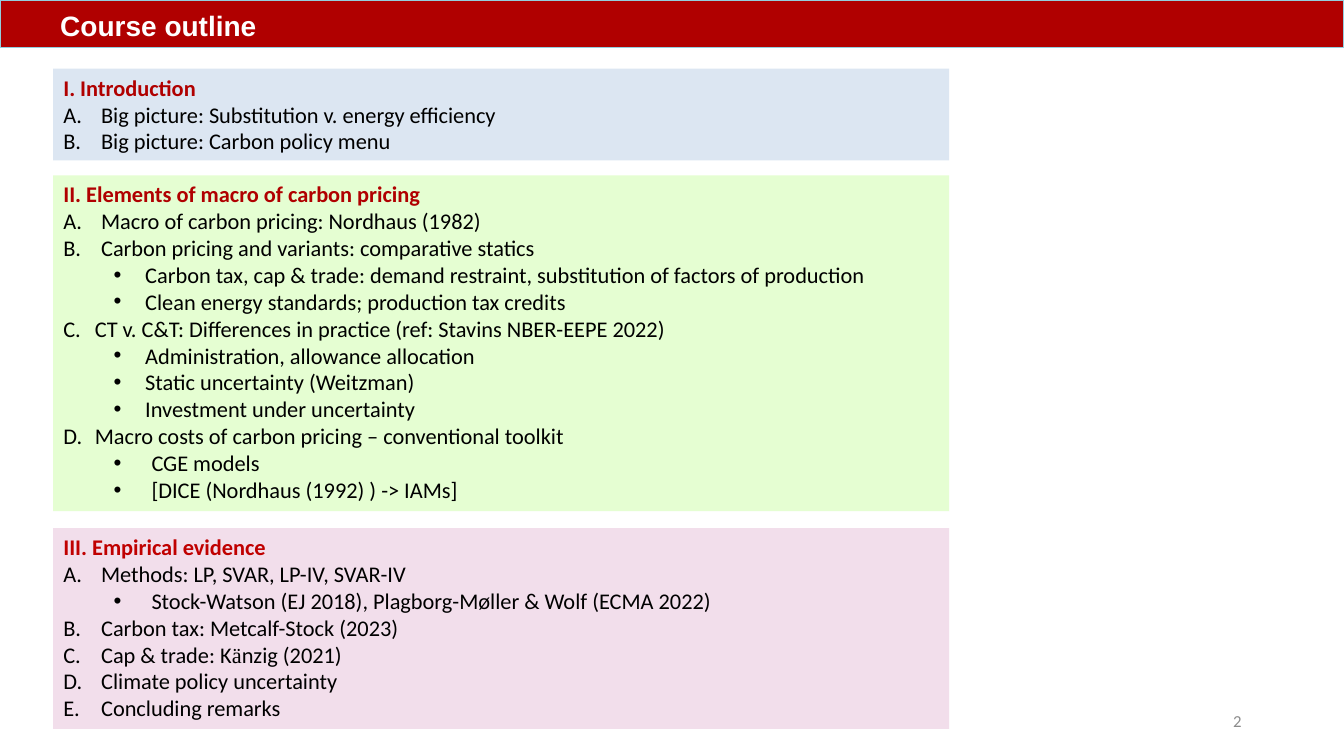
from dataclasses import dataclass

from lxml.etree import SubElement
from pptx import Presentation
from pptx.dml.color import RGBColor
from pptx.enum.text import MSO_ANCHOR as Anchor, MSO_AUTO_SIZE as AutoSize, PP_ALIGN as Align
from pptx.oxml.ns import qn
from pptx.util import Pt

CRIMSON, BRIGHT_RED, BLACK, WHITE = "B00000", "C00000", "000000", "FFFFFF"
BOX_LEFT, BOX_WIDTH = 38, 640


@dataclass(frozen=True)
class Entry:
    """One outline line; start sets the first letter of a new lettered sequence."""
    text: str
    hang: float = 27
    level: int = 0
    start: int = 1
    serif_letter: str = ""


@dataclass(frozen=True)
class Section:
    heading: str
    top: float
    height: float
    fill: str
    entries: tuple[Entry, ...]
    heading_color: str = CRIMSON


SECTIONS = (
    Section("I. Introduction", 49.1, 65.5, "DCE6F2", (
        Entry("Big picture: Substitution v. energy efficiency"),
        Entry("Big picture: Carbon policy menu"),
    )),
    Section("II. Elements of macro of carbon pricing", 125.3, 239.8, "E5FED2", (
        Entry("Macro of carbon pricing: Nordhaus (1982)"),
        Entry("Carbon pricing and variants: comparative statics"),
        Entry("Carbon tax, cap & trade: demand restraint, substitution of factors of production",
              22.5, level=1),
        Entry("Clean energy standards; production tax credits", 22.5, level=1),
        Entry("CT v. C&T: Differences in practice (ref: Stavins NBER-EEPE 2022)", 22.5, start=3),
        Entry("Administration, allowance allocation", 22.5, level=1),
        Entry("Static uncertainty (Weitzman)", 22.5, level=1),
        Entry("Investment under uncertainty", 22.5, level=1),
        Entry("Macro costs of carbon pricing – conventional toolkit", 22.5, start=3),
        Entry("CGE models", level=1),
        Entry("[DICE (Nordhaus (1992) ) -> IAMs]", level=1),
    )),
    Section("III. Empirical evidence", 377.3, 143.3, "F2DEEB", (
        Entry("Methods: LP, SVAR, LP-IV, SVAR-IV"),
        Entry("Stock-Watson (EJ 2018), Plagborg-Møller & Wolf (ECMA 2022)", level=1),
        Entry("Carbon tax: Metcalf-Stock (2023)"),
        Entry("Cap & trade: Känzig (2021)", serif_letter="ä"),
        Entry("Climate policy uncertainty"),
        Entry("Concluding remarks"),
    ), BRIGHT_RED),
)


def rgb(color: str) -> RGBColor:
    return RGBColor.from_string(color)


def style(paragraph, size: float, color: str, bold: bool = False, face: str = "Calibri") -> None:
    paragraph.line_spacing = 1.0
    paragraph.space_before = paragraph.space_after = Pt(0)
    font = paragraph.font
    font.size, font.bold, font.name = Pt(size), bold, face
    font.color.rgb = rgb(color)


def place(shape, left: float, top: float, width: float, height: float) -> None:
    shape.left, shape.top, shape.width, shape.height = map(Pt, (left, top, width, height))


def fill_with(shape, color: str) -> None:
    shape.fill.solid()
    shape.fill.fore_color.rgb = rgb(color)


def set_indent(paragraph, margin: float, hang: float):
    properties = paragraph._p.get_or_add_pPr()
    properties.set("marL", str(Pt(margin)))
    properties.set("indent", str(-Pt(hang)))
    return properties


def add_entry(frame, entry: Entry) -> None:
    paragraph = frame.add_paragraph()
    paragraph.level = entry.level
    properties = set_indent(paragraph, 36 * entry.level + entry.hang, entry.hang)
    if entry.level:
        SubElement(properties, qn("a:buFont"), typeface="Arial")
        SubElement(properties, qn("a:buChar"), char="•")
    else:
        SubElement(properties, qn("a:buFont"), typeface="+mj-lt")
        lettering = SubElement(properties, qn("a:buAutoNum"), type="alphaUcPeriod")
        if entry.start > 1:
            lettering.set("startAt", str(entry.start))
    style(paragraph, 16, BLACK)
    if entry.serif_letter:
        before, letter, after = entry.text.partition(entry.serif_letter)
        for part in (before, letter, after):
            run = paragraph.add_run()
            run.text = part
            if part == letter:
                run.font.name = "Times New Roman"
    else:
        paragraph.text = entry.text


def draw_section(body, section: Section) -> None:
    place(body, BOX_LEFT, section.top, BOX_WIDTH, section.height)
    fill_with(body, section.fill)
    frame = body.text_frame
    frame.auto_size, frame.vertical_anchor = AutoSize.NONE, Anchor.TOP
    heading = frame.paragraphs[0]
    heading.text = section.heading
    SubElement(set_indent(heading, 0, 0), qn("a:buNone"))
    style(heading, 16, section.heading_color, bold=True)
    for entry in section.entries:
        add_entry(frame, entry)


def draw_title(title) -> None:
    place(title, 0, 0, 960, 34)
    fill_with(title, CRIMSON)
    title.line.color.rgb = rgb("93CDDD")
    title.line.width = Pt(0)
    frame = title.text_frame
    frame.text = "Course outline"
    frame.auto_size, frame.vertical_anchor = AutoSize.NONE, Anchor.BOTTOM
    frame.margin_left = Pt(43)
    frame.paragraphs[0].alignment = Align.LEFT
    style(frame.paragraphs[0], 20, WHITE, bold=True, face="Arial")


def draw_page_number(slide) -> None:
    frame = slide.shapes.add_textbox(Pt(678), Pt(500.4), Pt(216), Pt(28.8)).text_frame
    frame.word_wrap, frame.vertical_anchor = True, Anchor.MIDDLE
    frame.text = "2"
    frame.paragraphs[0].alignment = Align.RIGHT
    style(frame.paragraphs[0], 12, "8C8C8C")


def main() -> None:
    deck = Presentation()
    deck.slide_width, deck.slide_height = Pt(960), Pt(540)
    comparison_layout = deck.slide_layouts[4]
    slide = deck.slides.add_slide(comparison_layout)
    title, *bodies, spare = slide.placeholders
    draw_title(title)
    for body, section in zip(bodies, SECTIONS):
        draw_section(body, section)
    spare.element.getparent().remove(spare.element)
    draw_page_number(slide)
    deck.save("out.pptx")


if __name__ == "__main__":
    main()
